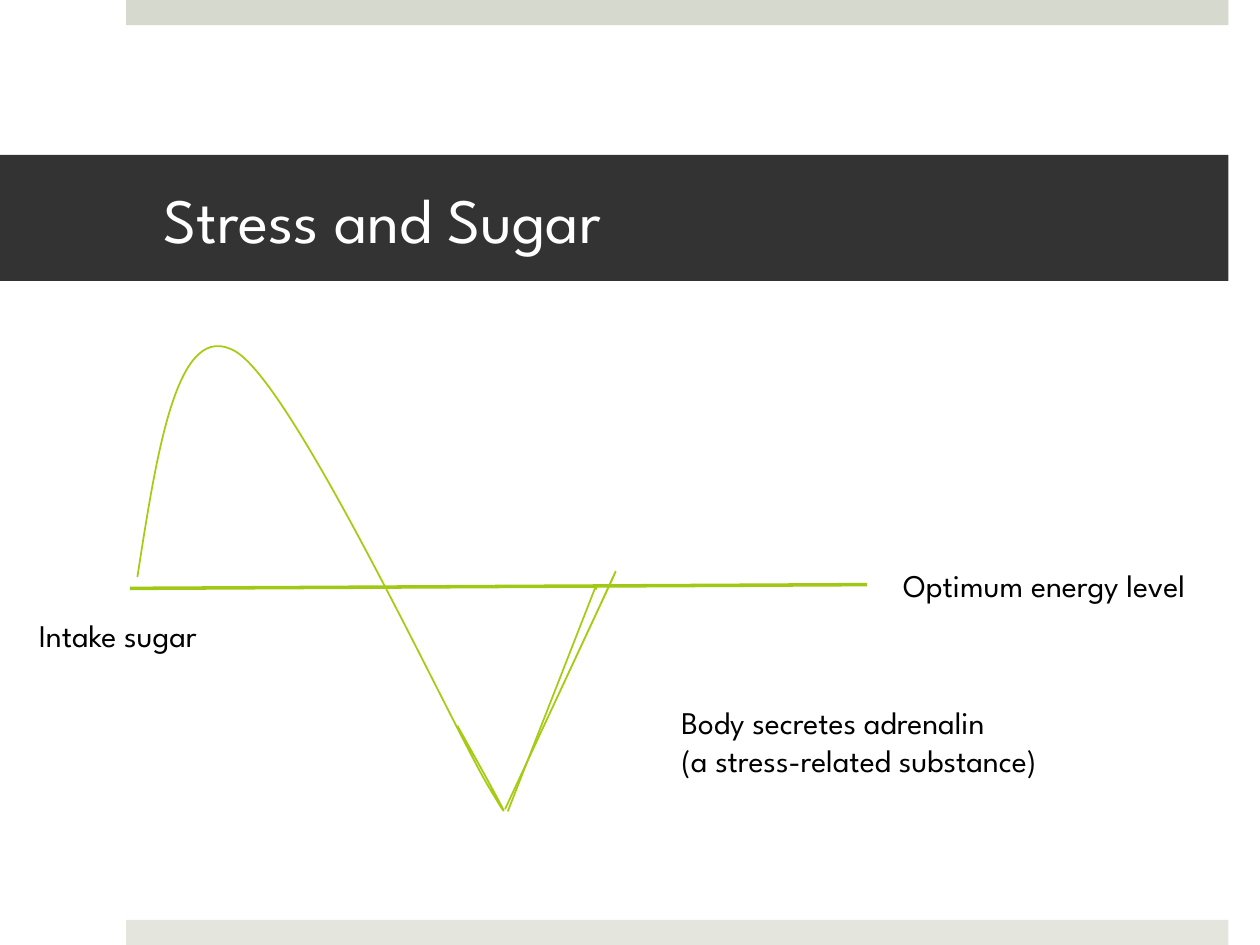
"""Build the Stress and Sugar slide with its energy-level curve."""
from dataclasses import dataclass
from typing import Optional

from lxml import etree
from pptx import Presentation
from pptx import util as u
from pptx.dml import color as dml
from pptx.enum import shapes, text
from pptx.oxml import ns

Point = tuple[float, float]


@dataclass(frozen=True)
class Theme:
    font: str = "League Spartan"
    title_size: int = 36
    label_size: int = 18
    white: str = "FFFFFF"
    black: str = "000000"
    banner: str = "333333"
    top_bar: str = "D6D9CD"
    bottom_bar: str = "E4E6DE"
    axis: str = "A2C816"
    curve: str = "A5CC12"
    curve_fill: str = "93B614"


@dataclass(frozen=True)
class Area:
    left: float
    top: float
    width: float
    height: float

    def lengths(self) -> list[u.Length]:
        """Return the four measures as lengths."""
        return [u.Inches(n) for n in (self.left, self.top, self.width, self.height)]


@dataclass(frozen=True)
class Label:
    area: Area
    words: str


@dataclass(frozen=True)
class Stroke:
    area: Area
    start: Point
    segments: tuple[tuple[Point, ...], ...]
    fill: Optional[str] = None


THEME = Theme()
BARS = (
    (Area(1, 0, 8.75, 0.2), THEME.top_bar),
    (Area(1, 7.3, 8.75, 0.2), THEME.bottom_bar),
)
BANNER = Area(0, 1.23, 9.75, 1)
OPTIMUM = Label(Area(7.07, 4.44, 2.93, 0.4), "Optimum energy level")
INTAKE = Label(Area(0.21, 4.84, 1.7, 0.4), "Intake sugar")
ADRENALIN = Label(Area(5.31, 5.53, 3.55, 0.71),
                  "Body secretes adrenalin\n(a stress-related substance)")
SUGAR_CURVE = Stroke(Area(1.09, 2.75, 2.91, 3.69), (1.09, 4.58), (
    ((1.25, 3.55), (1.41, 2.52), (1.87, 2.79)),
    ((2.34, 3.07), (3.58, 5.74), (3.87, 6.23)),
    ((4.16, 6.72), (3.9, 6.24), (3.63, 5.76)),
))
ADRENALIN_RISE = Stroke(Area(4.01, 4.53, 0.87, 1.89), (4.01, 6.42), (
    ((4.85, 4.62),),
    ((4.97, 4.35), (4.76, 4.81), (4.76, 4.81)),
    ((4.01, 6.42),),
), THEME.curve_fill)
RETURN_LINE = Stroke(Area(4.03, 4.65, 0.71, 1.78), (4.03, 6.44), (
    ((4.73, 4.65),),
    ((4.73, 4.68),),
))


def rgb(color: str) -> dml.RGBColor:
    """Return a colour from its hex name."""
    return dml.RGBColor.from_string(color)


def style_text(frame, size: int, color: str) -> None:
    """Format every run of a text frame."""
    for para in frame.paragraphs:
        para.alignment = text.PP_ALIGN.LEFT
        for span in para.runs:
            span.font.name = THEME.font
            span.font.size = u.Pt(size)
            span.font.color.rgb = rgb(color)


def draw_bar(page, area: Area, color: str):
    """Draw a plain filled bar."""
    box = page.shapes.add_shape(shapes.MSO_SHAPE.RECTANGLE, *area.lengths())
    box.shadow.inherit = False
    box.fill.solid()
    box.fill.fore_color.rgb = rgb(color)
    box.line.fill.background()
    return box


def draw_title(page, words: str) -> None:
    """Draw the dark banner with the slide title."""
    frame = draw_bar(page, BANNER, THEME.banner).text_frame
    frame.margin_left, frame.margin_right = u.Inches(1.3), u.Inches(0.3)
    frame.vertical_anchor = text.MSO_ANCHOR.MIDDLE
    frame.word_wrap = True
    frame.text = words
    style_text(frame, THEME.title_size, THEME.white)


def draw_label(page, label: Label) -> None:
    """Draw an unwrapped text label."""
    frame = page.shapes.add_textbox(*label.area.lengths()).text_frame
    frame.word_wrap = False
    frame.auto_size = text.MSO_AUTO_SIZE.SHAPE_TO_FIT_TEXT
    frame.text = label.words
    style_text(frame, THEME.label_size, THEME.black)


def draw_axis(page, start: Point, end: Point) -> None:
    """Draw the optimum energy line."""
    axis = page.shapes.add_connector(
        shapes.MSO_CONNECTOR.STRAIGHT, *map(u.Inches, start + end))
    axis.line.color.rgb = rgb(THEME.axis)
    axis.line.width = u.Pt(2)
    etree.SubElement(axis.element.spPr, ns.qn("a:effectLst"))


def trace(outline, stroke: Stroke) -> None:
    """Replace the commands of an outline with lines and cubic curves."""
    for command in list(outline):
        outline.remove(command)
    moves = [("a:moveTo", (stroke.start,))]
    moves += [("a:cubicBezTo" if len(points) == 3 else "a:lnTo", points)
              for points in stroke.segments]
    for tag, points in moves:
        command = etree.SubElement(outline, ns.qn(tag))
        for x, y in points:
            etree.SubElement(command, ns.qn("a:pt"),
                             x=str(u.Inches(x - stroke.area.left)),
                             y=str(u.Inches(y - stroke.area.top)))
    if stroke.fill:
        etree.SubElement(outline, ns.qn("a:close"))


def draw_stroke(page, stroke: Stroke) -> None:
    """Draw a stroke as a freeform, closed when it has a fill."""
    left, top, width, height = stroke.area.lengths()
    builder = page.shapes.build_freeform(left, top)
    builder.add_line_segments([(left + width, top + height)], close=False)
    shape = builder.convert_to_shape()
    trace(next(shape.element.iter(ns.qn("a:path"))), stroke)
    shape.shadow.inherit = False
    if stroke.fill:
        shape.fill.solid()
        shape.fill.fore_color.rgb = rgb(stroke.fill)
    else:
        shape.fill.background()
    shape.line.color.rgb = rgb(THEME.curve)
    shape.line.width = u.Pt(1)


def main() -> None:
    """Assemble and save the deck."""
    deck = Presentation()
    deck.slide_width, deck.slide_height = u.Inches(10), u.Inches(7.5)
    page = deck.slides.add_slide(deck.slide_layouts[6])
    page.background.fill.solid()
    page.background.fill.fore_color.rgb = rgb(THEME.white)
    for area, color in BARS:
        draw_bar(page, area, color)
    draw_title(page, "Stress and Sugar")
    draw_axis(page, (1.03, 4.67), (6.88, 4.64))
    draw_label(page, OPTIMUM)
    draw_stroke(page, SUGAR_CURVE)
    for label in (INTAKE, ADRENALIN):
        draw_label(page, label)
    for stroke in (ADRENALIN_RISE, RETURN_LINE):
        draw_stroke(page, stroke)
    deck.save("out.pptx")


if __name__ == "__main__":
    main()
